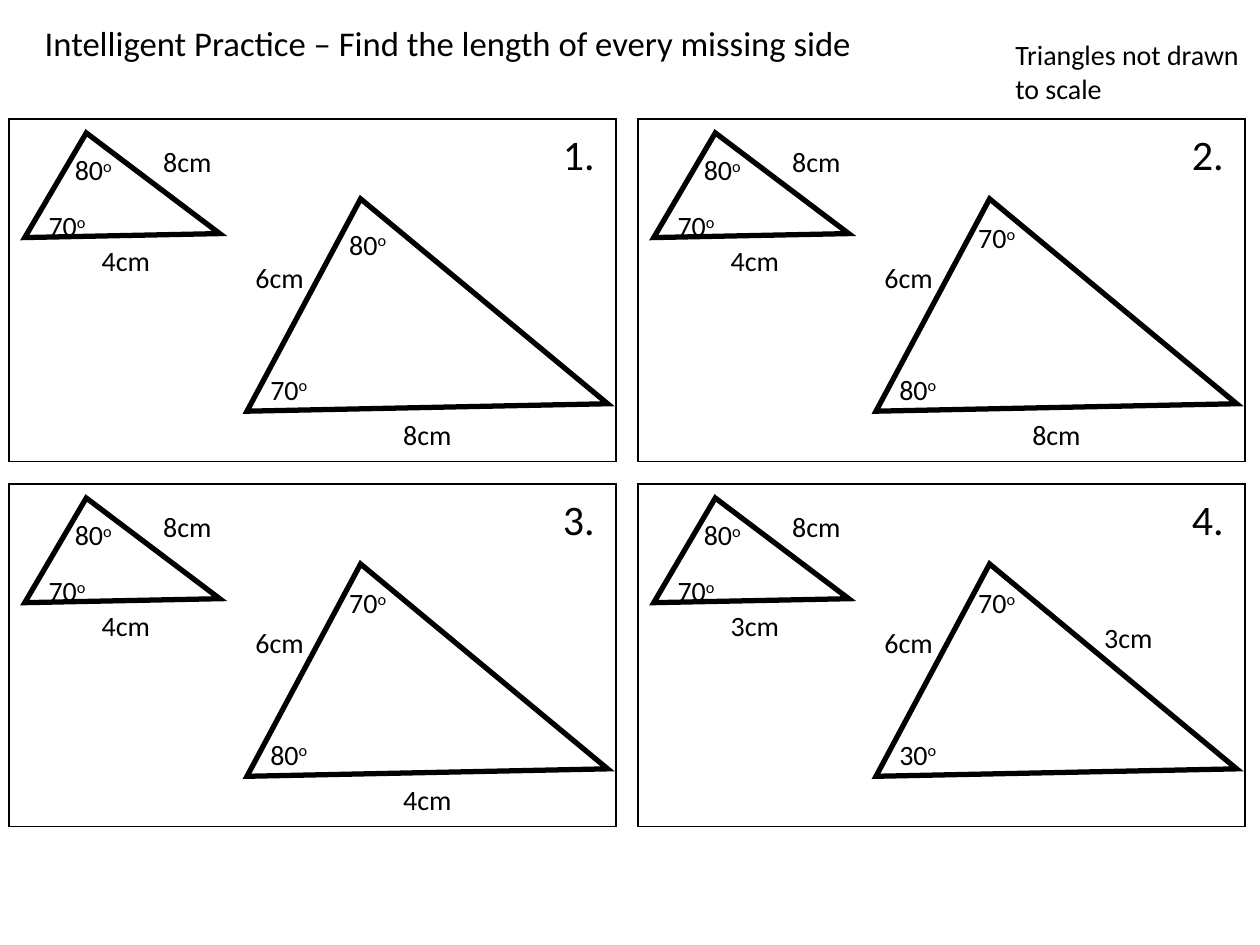
from lxml.etree import SubElement
from pptx import Presentation
from pptx.dml.color import RGBColor
from pptx.enum.shapes import MSO_SHAPE
from pptx.enum.text import MSO_ANCHOR, MSO_AUTO_SIZE, PP_ALIGN
from pptx.oxml.ns import qn
from pptx.util import Cm, Pt

COLORS = {"ink": "000000", "paper": "FFFFFF"}
FONT = "Calibri"

GRID_LEFT, GRID_TOP = 0.18, 2.4
COLUMN_STEP, ROW_STEP = 12.68, 7.36
FRAME_WIDTH, FRAME_HEIGHT = 12.24, 6.91

LARGE_TRIANGLE = [(7.09, 1.61), (4.8, 5.89), (12.07, 5.74)]
SMALL_TRIANGLE = [(1.56, 0.28), (0.32, 2.39), (4.25, 2.31)]

LABEL_SPOTS = {
    "large top": (6.61, 1.92),
    "large top lower": (6.61, 2.06),
    "large corner": (5.02, 4.98),
    "large left": (4.72, 2.72),
    "large right": (9.15, 2.62),
    "large base": (7.7, 5.89),
    "small top": (1.08, 0.55),
    "small corner": (0.55, 1.68),
    "small right": (2.86, 0.39),
    "small base": (1.62, 2.39),
}

SHARED_LABELS = {
    "small top": "80°",
    "small corner": "70°",
    "small right": "8cm",
    "large left": "6cm",
}

PUZZLES = [
    {"small base": "4cm", "large top lower": "80°", "large corner": "70°", "large base": "8cm"},
    {"small base": "4cm", "large top": "70°", "large corner": "80°", "large base": "8cm"},
    {"small base": "4cm", "large top": "70°", "large corner": "80°", "large base": "4cm"},
    {"small base": "3cm", "large top": "70°", "large corner": "30°", "large right": "3cm"},
]


def color(name):
    return RGBColor.from_string(COLORS[name])


def write_text(frame, text, size=16, wrap=False, spacing=None,
               anchor=MSO_ANCHOR.TOP, fit=MSO_AUTO_SIZE.SHAPE_TO_FIT_TEXT):
    frame.word_wrap = wrap
    frame.auto_size = fit
    frame.vertical_anchor = anchor
    paragraph = frame.paragraphs[0]
    paragraph.alignment = PP_ALIGN.LEFT
    if spacing:
        paragraph.line_spacing = spacing
    pieces = [(text.rstrip("°"), False)]
    if text.endswith("°"):
        pieces.append(("o", True))
    for content, raised in pieces:
        run = paragraph.add_run()
        run.text = content
        run.font.name = FONT
        run.font.size = Pt(size)
        run.font.color.rgb = color("ink")
        if raised:
            run._r.get_or_add_rPr().set("baseline", "30000")


def add_title(slide, text):
    title = slide.shapes.title
    title.left, title.top = Cm(0.5), Cm(0.36)
    title.width, title.height = Cm(19.38), Cm(1.78)
    frame = title.text_frame
    frame.margin_left, frame.margin_top = Cm(0.4), Cm(0.3)
    write_text(frame, text, size=19.8, wrap=True, spacing=0.7, fit=MSO_AUTO_SIZE.NONE)


def add_note(slide, text):
    note = slide.shapes.add_shape(MSO_SHAPE.RECTANGLE, Cm(20.22), Cm(0.64), Cm(5.18), Cm(1.63))
    note.shadow.inherit = False
    note.fill.solid()
    note.fill.fore_color.rgb = color("paper")
    note.line.fill.background()
    write_text(note.text_frame, text, wrap=True)


def add_label(slide, text, left, top, width, height=0.94, size=16):
    box = slide.shapes.add_textbox(Cm(left), Cm(top), Cm(width), Cm(height))
    write_text(box.text_frame, text, size=size)


def outline(shape, width):
    shape.shadow.inherit = False
    shape.line.color.rgb = color("ink")
    shape.line.width = Pt(width)
    miter = SubElement(shape.line._get_or_add_ln(), qn("a:miter"))
    miter.set("lim", "800000")


def add_triangle(slide, corners, left, top):
    points = [(Cm(left + x), Cm(top + y)) for x, y in corners]
    builder = slide.shapes.build_freeform(*points[0])
    builder.add_line_segments(points[1:], close=True)
    triangle = builder.convert_to_shape()
    triangle.fill.solid()
    triangle.fill.fore_color.rgb = color("paper")
    outline(triangle, 3)


def add_frame(slide, left, top):
    frame = slide.shapes.add_shape(
        MSO_SHAPE.RECTANGLE, Cm(left), Cm(top), Cm(FRAME_WIDTH), Cm(FRAME_HEIGHT))
    frame.fill.background()
    outline(frame, 0.75)


def add_puzzle(slide, number, labels, left, top):
    add_triangle(slide, LARGE_TRIANGLE, left, top)
    add_triangle(slide, SMALL_TRIANGLE, left, top)
    for spot, text in (SHARED_LABELS | labels).items():
        x, y = LABEL_SPOTS[spot]
        add_label(slide, text, left + x, top + y, 1.3 if text.endswith("°") else 1.5)
    add_frame(slide, left, top)
    add_label(slide, f"{number}.", left + 10.92, top + 0.06, 1.17, height=1.28, size=24)


def main():
    presentation = Presentation()
    presentation.slide_width, presentation.slide_height = Cm(25.4), Cm(19.05)
    slide = presentation.slides.add_slide(presentation.slide_layouts[5])
    add_title(slide, "Intelligent Practice – Find the length of every missing side")
    add_note(slide, "Triangles not drawn to scale")
    for index, labels in enumerate(PUZZLES):
        row, column = divmod(index, 2)
        add_puzzle(slide, index + 1, labels,
                   GRID_LEFT + column * COLUMN_STEP, GRID_TOP + row * ROW_STEP)
    presentation.save("out.pptx")


if __name__ == "__main__":
    main()
